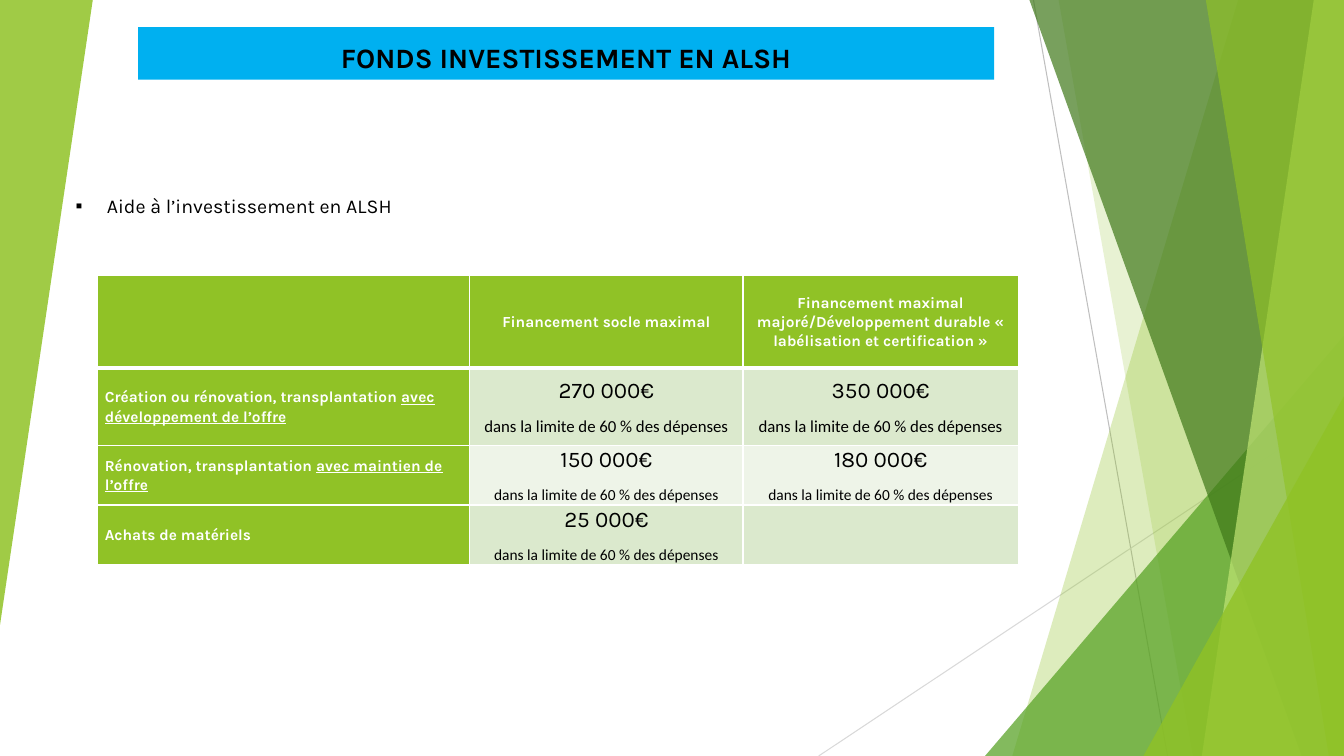
import pptx
import pptx.util
import pptx.oxml
import pptx.oxml.ns
import pptx.dml.color
import pptx.enum.shapes
import pptx.enum.text
from lxml import etree

PX = 9144  # 100 px to the inch
WIDE, HIGH = 1333, 750
GREEN, WHITE, BLACK = "90C226", "FFFFFF", "000000"
Pt = pptx.util.Pt
qn = pptx.oxml.ns.qn
ALIGN = pptx.enum.text.PP_ALIGN
ANCHOR = pptx.enum.text.MSO_ANCHOR


def paint(fill, color, alpha=100):
    """Make a fill solid, with alpha as a percentage of opacity."""
    fill.solid()
    fill.fore_color.rgb = pptx.dml.color.RGBColor.from_string(color)
    if alpha < 100:
        tint = fill._xPr.find(qn("a:solidFill"))[0]
        etree.SubElement(tint, qn("a:alpha"), val=str(alpha * 1000))


def style(par, size, color, bold=False, font="Karla", align=ALIGN.LEFT):
    par.alignment = align
    for run in par.runs:
        run.font.name = font
        run.font.size = Pt(size)
        run.font.bold = bold
        paint(run.font.fill, color)


deck = pptx.Presentation()
deck.slide_width, deck.slide_height = WIDE * PX, HIGH * PX
slide = deck.slides.add_slide(deck.slide_layouts[1])
shapes = slide.shapes

# Thin lines behind the facets
for x1, y1, x2, y2, color in [
    (1025, 0, 1158, HIGH, "BFBFBF"),
    (WIDE, 403, 812, HIGH, "D9D9D9"),
]:
    line = shapes.add_connector(
        pptx.enum.shapes.MSO_CONNECTOR.STRAIGHT, x1 * PX, y1 * PX, x2 * PX, y2 * PX)
    line.line.width = Pt(0.75)
    paint(line.line.fill, color)
    etree.SubElement(line._element.spPr, qn("a:effectLst"))

# Facets: (top x, bottom x) bands up to the right edge, or
# (left, top, width, height, turn) triangles
facets = [
    ((1228, 1004), GREEN, 30),
    ((1050, 1183), GREEN, 20),
    ((977, 333, 356, 417, 0), "54A021", 72),
    ((1021, 1291), "3F7819", 70),
    ((1303, 1192), "C0E474", 70),
    ((1196, 1318), GREEN, 65),
    ((1134, 393, 199, 357, 0), GREEN, 80),
    ((0, 0, 92, 620, 180), GREEN, 85),
]
for place, color, alpha in facets:
    if len(place) == 2:
        top, base = place
        path = shapes.build_freeform(top, 0, scale=PX)
        path.add_line_segments([(WIDE, 0), (WIDE, HIGH), (base, HIGH)], close=True)
        facet = path.convert_to_shape()
    else:
        *box, turn = place
        facet = shapes.add_shape(
            pptx.enum.shapes.MSO_SHAPE.ISOSCELES_TRIANGLE, *[n * PX for n in box])
        facet.adjustments[0] = 1
        facet.rotation = turn
    facet.shadow.inherit = False
    facet.line.fill.background()
    paint(facet.fill, color, alpha)

# Title and list
title, body = shapes.title, slide.placeholders[1]
for holder, box, text, anchor in [
    (title, (137, 27, 849, 52), "FONDS INVESTISSEMENT EN ALSH", ANCHOR.BOTTOM),
    (body, (65, 187, 1023, 34), "Aide à l’investissement en ALSH", ANCHOR.TOP),
]:
    holder.left, holder.top, holder.width, holder.height = [n * PX for n in box]
    frame = holder.text_frame
    frame.text = text
    frame.word_wrap = True
    frame.auto_size = pptx.enum.text.MSO_AUTO_SIZE.NONE
    frame.vertical_anchor = anchor
    shapes._spTree.append(holder._element)
paint(title.fill, "00B0F0")
style(title.text_frame.paragraphs[0], 20, BLACK, True, align=ALIGN.CENTER)

item = body.text_frame.paragraphs[0]
style(item, 14, BLACK)
item.space_before = Pt(0)
props = item._p.get_or_add_pPr()
props.set("marL", str(31 * PX))
props.set("indent", str(-31 * PX))
etree.SubElement(props, qn("a:buFont"), typeface="Arial")
etree.SubElement(props, qn("a:buChar"), char="▪")

# Funding table
heads = ["", "Financement socle maximal",
         "Financement maximal majoré/Développement durable « labélisation et certification »"]
note = "dans la limite de 60 % des dépenses"
# label, underlined end of label, amounts, note size, row fill
funds = [
    ("Création ou rénovation, transplantation ", "avec développement de l’offre",
     ["270 000€", "350 000€"], 12, "DBE9CD"),
    ("Rénovation, transplantation ", "avec maintien de l’offre",
     ["150 000€", "180 000€"], 11, "EEF4E8"),
    ("Achats de matériels", "", ["25 000€", ""], 11, "DBE9CD"),
]
cols, rows = [369, 271, 273], [92, 77, 59, 59]
table = shapes.add_table(
    len(rows), len(cols), 97 * PX, 273 * PX, sum(cols) * PX, sum(rows) * PX).table
table.horz_banding = False
for col, width in zip(table.columns, cols):
    col.width = width * PX
for row, height in zip(table.rows, rows):
    row.height = height * PX

for r in range(len(rows)):
    for c in range(len(cols)):
        cell = table.cell(r, c)
        cell.vertical_anchor = ANCHOR.MIDDLE
        cell.margin_left = cell.margin_right = 7 * PX
        cell.margin_top = cell.margin_bottom = 0
        for side in "LRTB":
            thick = 3 if (r, side) in [(0, "B"), (1, "T")] else 1
            edge = etree.SubElement(
                cell._tc.get_or_add_tcPr(), qn("a:ln" + side), w=str(Pt(thick)))
            ink = etree.SubElement(edge, qn("a:solidFill"))
            etree.SubElement(ink, qn("a:srgbClr"), val=WHITE)

        frame = cell.text_frame
        first = frame.paragraphs[0]
        if r == 0:
            paint(cell.fill, GREEN)
            first.text = heads[c]
            style(first, 11, WHITE, True, align=ALIGN.CENTER)
        else:
            label, tail, sums, size, shade = funds[r - 1]
            paint(cell.fill, shade if c else GREEN)
            if c == 0:
                first.text = label
                if tail:
                    end = first.add_run()
                    end.text = tail
                    end.font.underline = True
                style(first, 11, WHITE, True)
            elif sums[c - 1]:
                first.text = sums[c - 1]
                style(first, 16, BLACK, align=ALIGN.CENTER)
                limit = frame.add_paragraph()
                limit.text = note
                style(limit, size, BLACK, font="Calibri", align=ALIGN.CENTER)
        for par in frame.paragraphs:
            par.line_spacing = 1.07
            par.space_after = Pt(8)

shapes._spTree.append(title._element)
deck.save("out.pptx")
